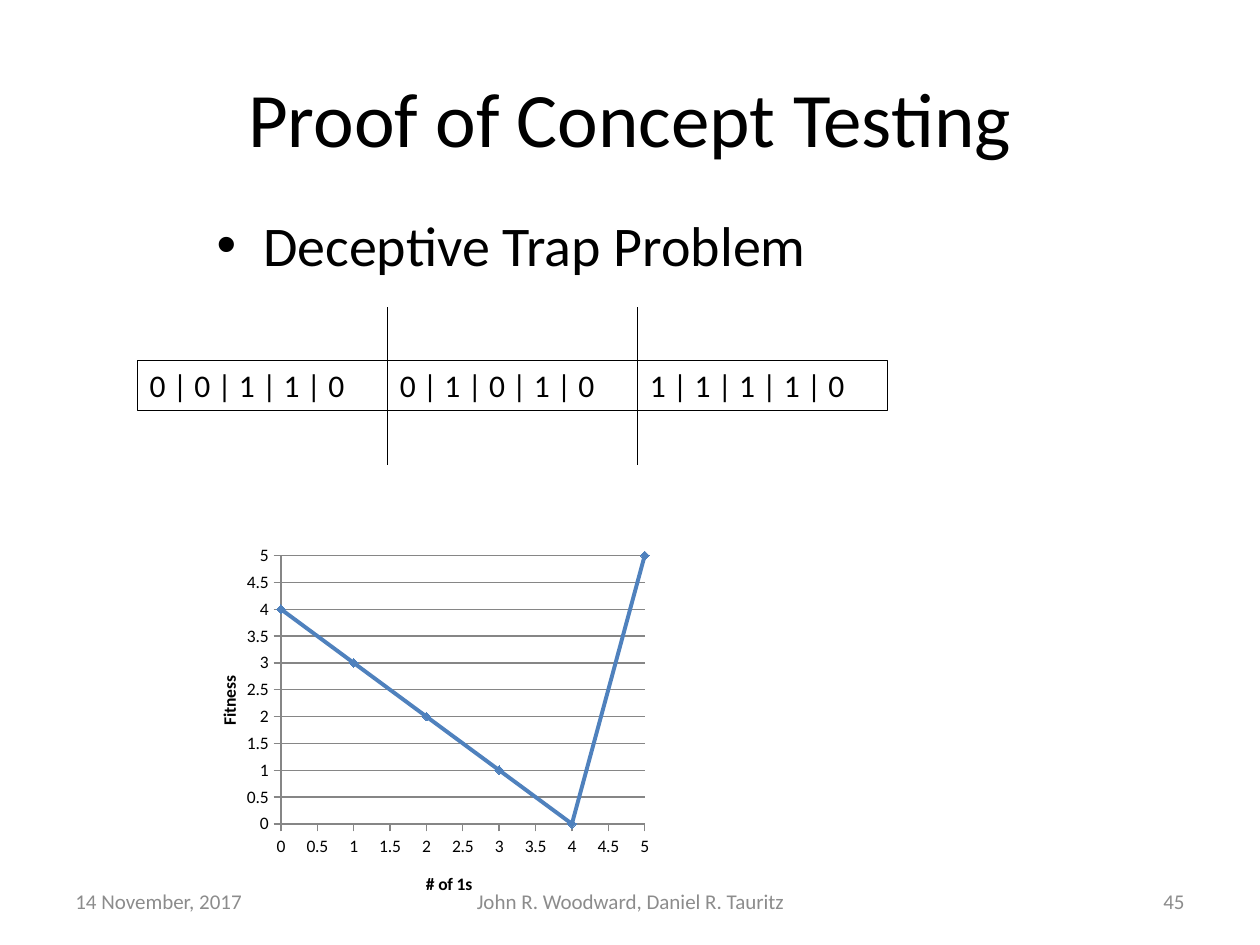
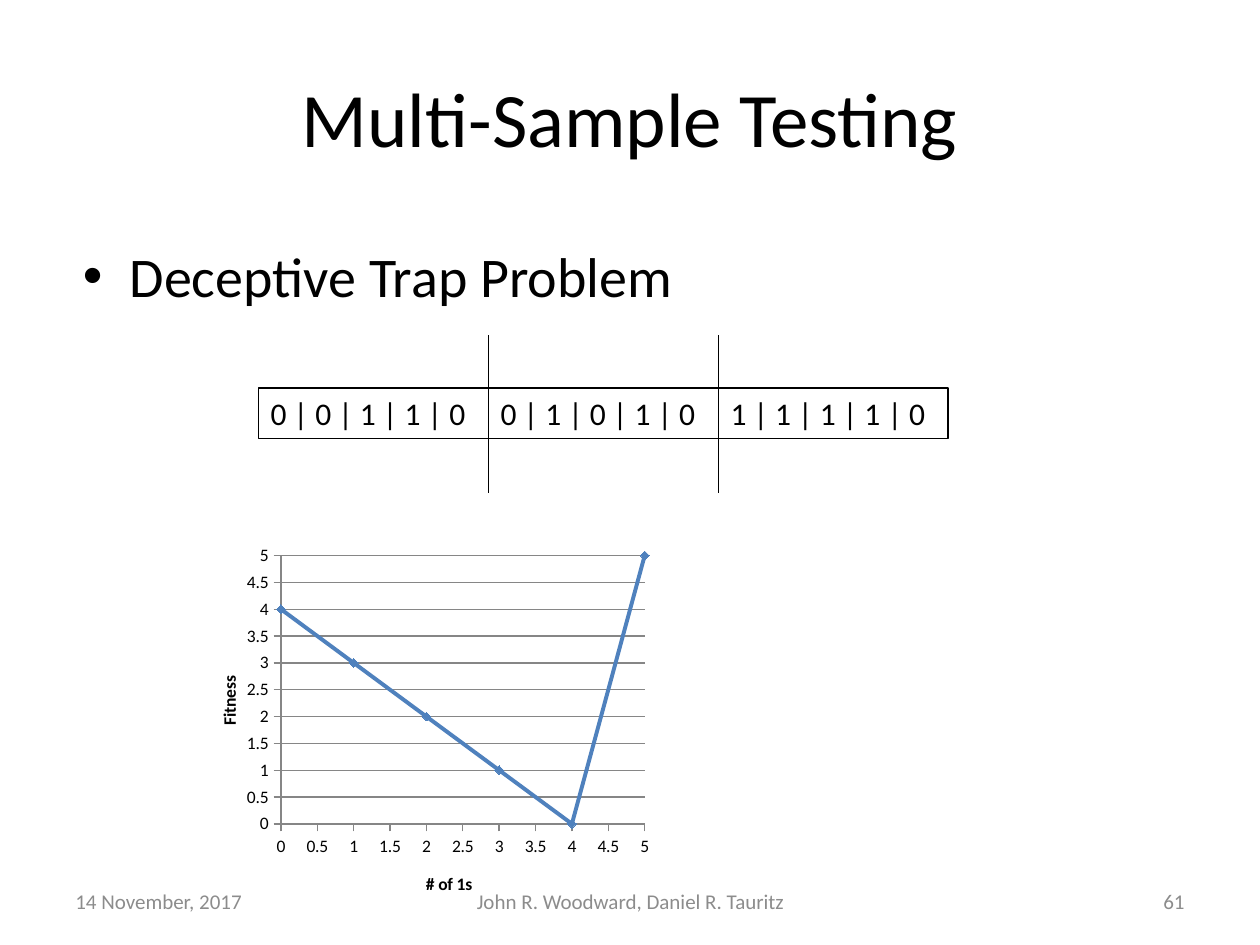
from dataclasses import dataclass

from lxml.etree import SubElement
from pptx import Presentation
from pptx.chart.data import XyChartData
from pptx.dml.color import RGBColor as Color
from pptx.enum.chart import XL_CHART_TYPE as ChartType
from pptx.enum.chart import XL_MARKER_STYLE as Marker
from pptx.enum.chart import XL_TICK_MARK as Tick
from pptx.enum.shapes import MSO_CONNECTOR as Connector
from pptx.enum.shapes import MSO_SHAPE as Shape
from pptx.enum.text import MSO_ANCHOR as Anchor
from pptx.enum.text import PP_ALIGN as Align
from pptx.oxml import parse_xml
from pptx.oxml.ns import nsdecls, qn
from pptx.util import Inches, Pt


@dataclass(frozen=True)
class Theme:
    font: str = "Calibri"
    ink: Color = Color(0x00, 0x00, 0x00)
    muted: Color = Color(0x8C, 0x8C, 0x8C)
    grid: Color = Color(0x86, 0x86, 0x86)
    series: Color = Color(0x4F, 0x81, 0xBD)
    title: Pt = Pt(44)
    bullet: Pt = Pt(32)
    gene: Pt = Pt(18)
    footer: Pt = Pt(12)
    chart: Pt = Pt(10)
    hairline: Pt = Pt(0.75)
    curve: Pt = Pt(2.25)


COLUMNS, ROWS = 100, 75
FOOTER_TOP, FOOTER_HEIGHT = 69.5, 4
GENE_HEIGHT = 4
DIVIDER_RISE, DIVIDER_DROP = 4.2, 8.3
TRAPS = ["0 | 0 | 1 | 1 | 0", "0 | 1 | 0 | 1 | 0", "1 | 1 | 1 | 1 | 0"]
FITNESS = [4, 3, 2, 1, 0, 5]
CHART_BOX = (14.8, 42.6, 37.5, 30)
PLOT_SHARE = {"x": 0.2, "y": 0.05, "w": 0.77, "h": 0.71}
DECK = [
    {"title": "Proof of Concept Testing", "number": "45",
     "bullet": (16.2, 16.2), "genes": (10.9, 28.6, 19.85)},
    {"title": "Multi-Sample Testing", "number": "61",
     "bullet": (5.6, 18.7), "genes": (20.5, 30.8, 18.25)},
]


def apply_format(target, values):
    for name, value in values.items():
        setattr(target, name, value)


def place_in_chart(parent, index, shares):
    for layout in parent.findall(qn("c:layout")):
        parent.remove(layout)
    layout = parse_xml(f"<c:layout {nsdecls('c')}/>")
    manual = SubElement(layout, qn("c:manualLayout"))
    if "w" in shares:
        SubElement(manual, qn("c:layoutTarget")).set("val", "inner")
    for mode in ("xMode", "yMode"):
        SubElement(manual, qn(f"c:{mode}")).set("val", "edge")
    for name, share in shares.items():
        SubElement(manual, qn(f"c:{name}")).set("val", str(share))
    parent.insert(index, layout)


class SlideBuilder:
    def __init__(self, presentation, theme):
        self.presentation = presentation
        self.theme = theme
        self.column = presentation.slide_width / COLUMNS
        self.row = presentation.slide_height / ROWS
        self.slide = None

    def box(self, left, top, width, height):
        return (round(left * self.column), round(top * self.row),
                round(width * self.column), round(height * self.row))

    def start(self, title):
        layout = self.presentation.slide_layouts.get_by_name("Title Only")
        self.slide = self.presentation.slides.add_slide(layout)
        shape = self.slide.shapes.title
        bounds = zip(("left", "top", "width", "height"), self.box(5, 3, 90, 12.5))
        apply_format(shape, dict(bounds))
        self.fill_text(shape, title, self.theme.title, align=Align.CENTER, anchor=Anchor.MIDDLE)

    def fill_text(self, shape, text, size, color=None, align=Align.LEFT, anchor=Anchor.TOP):
        frame = shape.text_frame
        apply_format(frame, {"word_wrap": True, "vertical_anchor": anchor})
        paragraph = frame.paragraphs[0]
        paragraph.alignment = align
        run = paragraph.add_run()
        run.text = text
        apply_format(run.font, {"name": self.theme.font, "size": size})
        run.font.color.rgb = color or self.theme.ink
        return paragraph

    def text(self, bounds, *content, **style):
        shape = self.slide.shapes.add_textbox(*self.box(*bounds))
        return self.fill_text(shape, *content, **style)

    def bullet(self, left, top, text):
        paragraph = self.text((left, top, 67.5, 7.1), text, self.theme.bullet)
        paragraph.space_before = Pt(6.4)
        properties = paragraph._p.get_or_add_pPr()
        indent = Inches(0.37)
        properties.set("marL", str(indent))
        properties.set("indent", str(-indent))
        SubElement(properties, qn("a:buFont")).set("typeface", "Arial")
        SubElement(properties, qn("a:buChar")).set("char", "•")

    def line(self, line, color, width):
        line.color.rgb = color
        line.width = width

    def gene(self, left, top, width, text):
        bounds = self.box(left, top, width, GENE_HEIGHT)
        shape = self.slide.shapes.add_shape(Shape.RECTANGLE, *bounds)
        shape.shadow.inherit = False
        shape.fill.background()
        self.line(shape.line, self.theme.ink, self.theme.hairline)
        self.fill_text(shape, text, self.theme.gene)

    def divider(self, left, top):
        x, start, _, _ = self.box(left, top + DIVIDER_DROP, 0, 0)
        _, end, _, _ = self.box(left, top - DIVIDER_RISE, 0, 0)
        connector = self.slide.shapes.add_connector(Connector.STRAIGHT, x, start, x, end)
        self.line(connector.line, self.theme.ink, self.theme.hairline)
        SubElement(connector.element.find(qn("p:spPr")), qn("a:effectLst"))

    def chromosome(self, left, top, width):
        for index, trap in enumerate(TRAPS):
            self.gene(left + index * width, top, width, trap)
        for index in range(1, len(TRAPS)):
            self.divider(left + index * width, top)

    def axis(self, axis, title, shares, gridlines, rotation):
        apply_format(axis, {
            "minimum_scale": 0, "maximum_scale": 5, "major_unit": 0.5,
            "has_major_gridlines": gridlines, "has_minor_gridlines": False,
            "major_tick_mark": Tick.OUTSIDE, "minor_tick_mark": Tick.NONE,
        })
        apply_format(axis.tick_labels, {"number_format": "General",
                                        "number_format_is_linked": False})
        self.line(axis.format.line, self.theme.grid, self.theme.hairline)
        if gridlines:
            self.line(axis.major_gridlines.format.line, self.theme.grid, self.theme.hairline)
        frame = axis.axis_title.text_frame
        frame.text = title
        font = frame.paragraphs[0].runs[0].font
        apply_format(font, {"name": self.theme.font, "size": self.theme.chart, "bold": True})
        font.color.rgb = self.theme.ink
        element = axis.axis_title.element
        element.find(f".//{qn('a:bodyPr')}").set("rot", str(rotation))
        place_in_chart(element, 1, shares)

    def fitness_chart(self):
        data = XyChartData()
        points = data.add_series("Series 1")
        for ones, fitness in enumerate(FITNESS):
            points.add_data_point(ones, fitness)
        frame = self.slide.shapes.add_chart(
            ChartType.XY_SCATTER_LINES, *self.box(*CHART_BOX), data)
        chart = frame.chart
        apply_format(chart, {"has_title": False, "has_legend": False})
        apply_format(chart.font, {"name": self.theme.font, "size": self.theme.chart})
        chart.font.color.rgb = self.theme.ink
        plot = chart.plots[0]
        plot.vary_by_categories = False
        series = plot.series[0]
        self.line(series.format.line, self.theme.series, self.theme.curve)
        apply_format(series.marker, {"style": Marker.DIAMOND, "size": 5})
        series.marker.format.fill.solid()
        series.marker.format.fill.fore_color.rgb = self.theme.series
        self.line(series.marker.format.line, self.theme.series, self.theme.hairline)
        self.axis(chart.category_axis, "# of 1s", {"x": 0.5, "y": 0.88}, False, 0)
        self.axis(chart.value_axis, "Fitness", {"x": 0.06, "y": 0.36}, True, -5400000)
        place_in_chart(chart.element.find(f".//{qn('c:plotArea')}"), 0, PLOT_SHARE)

    def footer(self, number):
        for left, width, text, align in (
            (71.7, 23.3, number, Align.RIGHT),
            (34.2, 31.7, "John R. Woodward, Daniel R. Tauritz", Align.CENTER),
            (5, 23.3, "14 November, 2017", Align.LEFT),
        ):
            self.text((left, FOOTER_TOP, width, FOOTER_HEIGHT), text, self.theme.footer,
                      color=self.theme.muted, align=align, anchor=Anchor.MIDDLE)


def main():
    presentation = Presentation()
    presentation.slide_width, presentation.slide_height = Inches(10), Inches(7.5)
    builder = SlideBuilder(presentation, Theme())
    for page in DECK:
        builder.start(page["title"])
        builder.bullet(*page["bullet"], "Deceptive Trap Problem")
        builder.fitness_chart()
        builder.chromosome(*page["genes"])
        builder.footer(page["number"])
    presentation.save("out.pptx")


if __name__ == "__main__":
    main()
